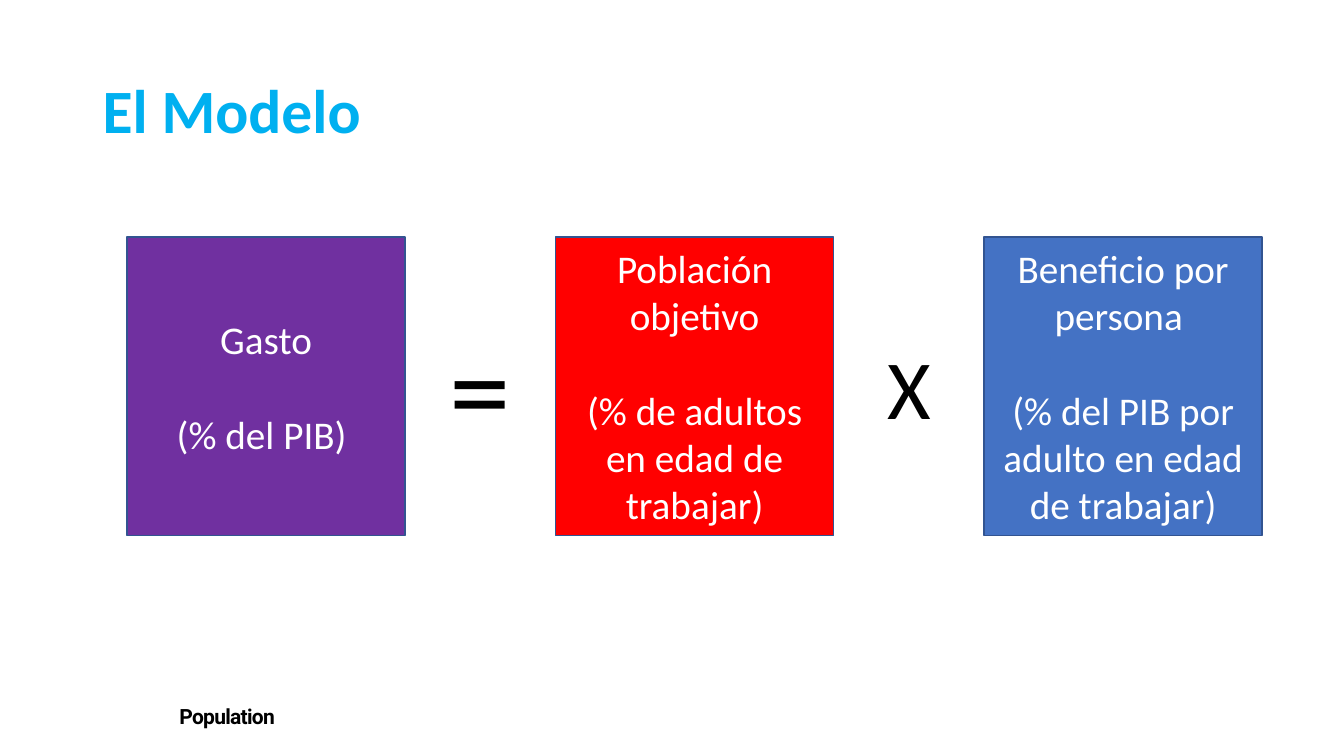
from pptx import Presentation
from pptx.dml.color import RGBColor
from pptx.enum.shapes import MSO_SHAPE
from pptx.enum.text import MSO_ANCHOR, PP_ALIGN
from pptx.util import Cm, Pt

# Content
TITLE = "El Modelo"
FOOTER = "Population"
FACTORS = [  # paragraphs, fill
    (["Gasto", "(% del PIB) "], "7030A0"),
    (["Población objetivo", "(% de adultos en edad de trabajar)"], "FF0000"),
    (["Beneficio por persona ", "(% del PIB por adulto en edad de trabajar)"], "4472C4"),
]
OPERATORS = [  # sign, size, top, height
    ("=", 88, 7.72, 4.01),
    ("X", 60, 8.33, 2.82),
]

# Layout in centimetres
BOX_LEFT, BOX_TOP, BOX_WIDTH, BOX_HEIGHT = 3.2, 5.97, 7.01, 7.52
STEP = 10.8
SIGN_WIDTH = 2.51


def color(value):
    return RGBColor.from_string(value)


def style(para, size, fill, name="Calibri", bold=False, align=PP_ALIGN.CENTER):
    para.alignment = align
    para.font.name = name
    para.font.size = Pt(size)
    para.font.bold = bold
    para.font.color.rgb = color(fill)


def add_text(page, text, left, top, width, height):
    box = page.shapes.add_textbox(Cm(left), Cm(top), Cm(width), Cm(height))
    box.text_frame.word_wrap = True
    para = box.text_frame.paragraphs[0]
    para.text = text
    return para


def add_factor(page, index, texts, fill):
    box = page.shapes.add_shape(
        MSO_SHAPE.RECTANGLE, Cm(BOX_LEFT + index * STEP), Cm(BOX_TOP),
        Cm(BOX_WIDTH), Cm(BOX_HEIGHT))
    box.shadow.inherit = False
    box.fill.solid()
    box.fill.fore_color.rgb = color(fill)
    box.line.color.rgb = color("325491")
    box.line.width = Pt(1)
    frame = box.text_frame
    frame.word_wrap = True
    frame.vertical_anchor = MSO_ANCHOR.MIDDLE
    frame.text = "\n".join(texts)
    for para in frame.paragraphs:
        style(para, 28, "FFFFFF")
    frame.paragraphs[1].space_before = Pt(34)


def main():
    deck = Presentation()
    deck.slide_width, deck.slide_height = Cm(33.87), Cm(19.05)
    page = deck.slides.add_slide(deck.slide_layouts[5])

    # Title
    title = page.shapes.title
    title.left, title.top, title.width, title.height = Cm(2.33), Cm(1.01), Cm(29.21), Cm(3.68)
    title.text_frame.text = TITLE
    title.text_frame.vertical_anchor = MSO_ANCHOR.MIDDLE
    heading = title.text_frame.paragraphs[0]
    heading.line_spacing = 0.9
    style(heading, 44, "00B0F0", bold=True, align=PP_ALIGN.LEFT)

    # Equation: boxes, then signs centred in the gaps
    for index, (texts, fill) in enumerate(FACTORS):
        add_factor(page, index, texts, fill)
    sign_left = BOX_LEFT + (BOX_WIDTH + STEP - SIGN_WIDTH) / 2
    for index, (sign, size, top, height) in enumerate(OPERATORS):
        para = add_text(page, sign, sign_left + index * STEP, top, SIGN_WIDTH, height)
        style(para, size, "000000")

    # Footer label with slightly tightened letters
    para = add_text(page, FOOTER, 4.27, 17.6, 14.83, 0.89)
    style(para, 15, "000000", name="Roboto", bold=True, align=PP_ALIGN.LEFT)
    para.runs[0]._r.get_or_add_rPr().set("spc", "-50")

    deck.save("out.pptx")


if __name__ == "__main__":
    main()
